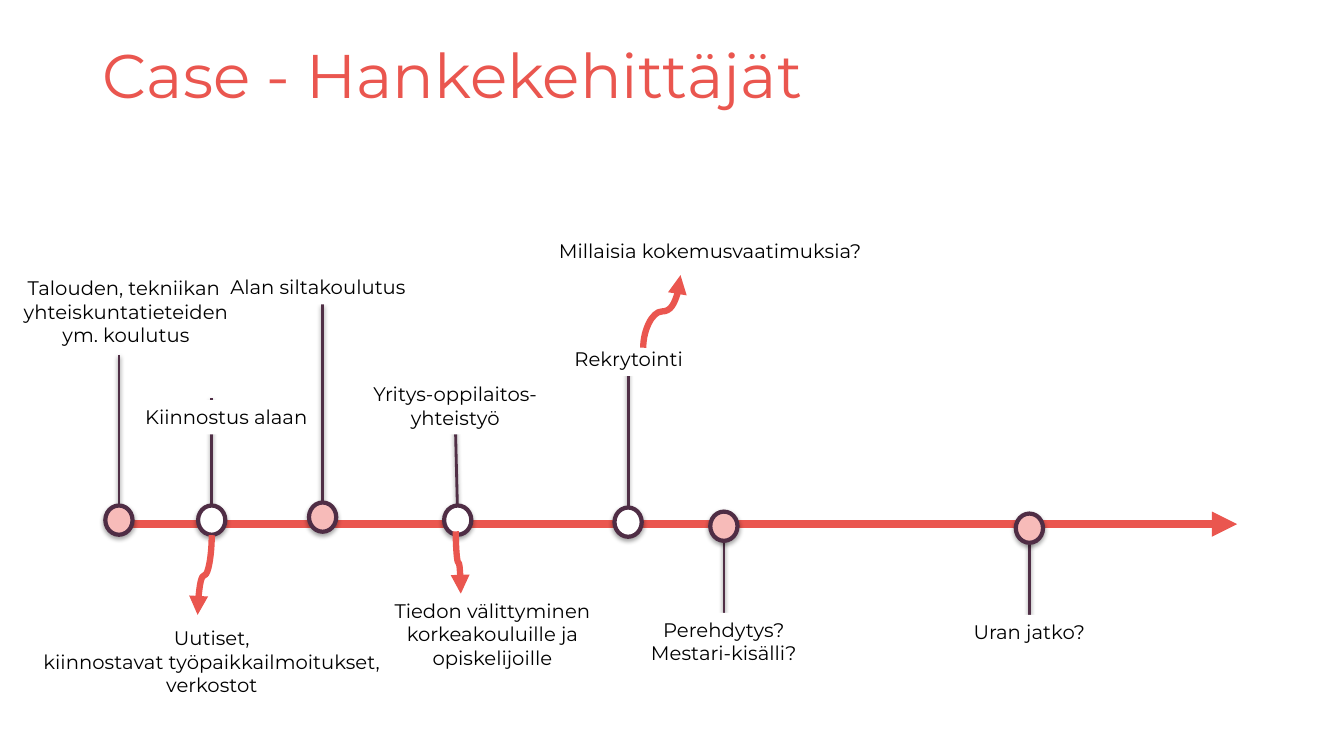
from dataclasses import dataclass
from typing import Optional

from lxml import etree
from pptx import Presentation
from pptx.dml.color import RGBColor
from pptx.enum.shapes import MSO_CONNECTOR as Link, MSO_SHAPE as Shape
from pptx.enum.text import MSO_ANCHOR as Anchor, MSO_AUTO_SIZE as Fit, PP_ALIGN as Align
from pptx.oxml import parse_xml
from pptx.oxml.ns import nsdecls, qn
from pptx.util import Inches, Pt

FONT = "Montserrat"
CORAL = RGBColor(0xEA, 0x56, 0x4F)
PINK = RGBColor(0xF7, 0xBB, 0xB9)
PLUM = RGBColor(0x50, 0x2F, 0x46)
EDGE = RGBColor(0x4F, 0x2D, 0x45)
WHITE = RGBColor(0xFF, 0xFF, 0xFF)
BLACK = RGBColor(0, 0, 0)
AXIS_Y = 5.2
DOT_W, DOT_H = 0.27, 0.29


@dataclass
class Label:
    text: str
    left: float
    top: float
    width: float
    height: float
    fill: Optional[RGBColor] = WHITE
    wrap: bool = False


@dataclass
class Stop:
    x: float
    y: float
    tip: float
    fill: RGBColor
    label: Label
    lean: float = 0


@dataclass
class Curve:
    x1: float
    y1: float
    x2: float
    y2: float


STOPS = [
    Stop(1.18, 5.16, 3.52, PINK,
         Label("Talouden, tekniikan, yhteiskuntatieteiden ym. koulutus",
               0.08, 2.69, 2.34, 0.81, fill=None, wrap=True)),
    Stop(2.1, 5.16, 3.95, WHITE,
         Label("Kiinnostus alaan", 1.29, 3.97, 1.91, 0.34, wrap=True)),
    Stop(3.2, 5.13, 3.02, PINK,
         Label("Alan siltakoulutus", 2.18, 2.68, 1.95, 0.34)),
    Stop(4.54, 5.16, 3.95, WHITE,
         Label("Yritys-oppilaitos-\nyhteistyö", 3.59, 3.74, 1.85, 0.57), lean=-0.03),
    Stop(6.23, 5.18, 3.54, WHITE,
         Label("Rekrytointi", 5.59, 3.39, 1.29, 0.34)),
    Stop(7.18, 5.22, 6.08, PINK,
         Label("Perehdytys?\nMestari-kisälli?", 6.35, 6.08, 1.66, 0.57)),
    Stop(10.21, 5.24, 6.1, PINK,
         Label("Uran jatko?", 9.54, 6.1, 1.34, 0.34)),
]
CURVES = [
    Curve(2.1, 5.31, 1.96, 6.1),
    Curve(4.52, 5.27, 4.57, 5.89),
    Curve(6.38, 3.45, 6.75, 2.73),
]
NOTES = [
    Label("Uutiset,\nkiinnostavat työpaikkailmoitukset,\nverkostot", 0.29, 6.16, 3.62, 0.81),
    Label("Tiedon välittyminen\nkorkeakouluille ja\nopiskelijoille", 3.8, 5.89, 2.17, 0.81),
    Label("Millaisia kokemusvaatimuksia?", 5.42, 2.32, 3.25, 0.34),
]


def write(frame, text: str, *, size: float, color: RGBColor, align: Align,
          wrap: bool = True, fit: Fit = Fit.NONE, space: Optional[float] = None) -> None:
    frame.word_wrap = wrap
    frame.auto_size = fit
    frame.vertical_anchor = Anchor.TOP
    para = frame.paragraphs[0]
    para.text = text.replace("\n", "\v")
    para.alignment = align
    para.line_spacing = space
    for run in para.runs:
        run.font.name = FONT
        run.font.size = Pt(size)
        run.font.color.rgb = color


def shade(shape, alpha: int, dist: int) -> None:
    """Cast a soft black shadow straight down."""
    props = shape._element.spPr
    for old in props.findall(qn("a:effectLst")):
        props.remove(old)
    props.append(parse_xml(
        f'<a:effectLst {nsdecls("a")}><a:outerShdw blurRad="40000" dist="{dist}" '
        f'dir="5400000" rotWithShape="0"><a:srgbClr val="000000">'
        f'<a:alpha val="{alpha}000"/></a:srgbClr></a:outerShdw></a:effectLst>'))


def join(slide, kind: Link, x1: float, y1: float, x2: float, y2: float, *,
         color: RGBColor, width: float, arrow: bool = False):
    """Add a connector without shadow, with an optional arrowhead."""
    line = slide.shapes.add_connector(kind, Inches(x1), Inches(y1), Inches(x2), Inches(y2))
    line.line.color.rgb = color
    line.line.width = Pt(width)
    if arrow:
        etree.SubElement(line.line._get_or_add_ln(), qn("a:tailEnd"), type="triangle")
    etree.SubElement(line._element.spPr, qn("a:effectLst"))
    return line


def bend(slide, curve: Curve) -> None:
    """Draw a curved arrow that leaves and arrives vertically, by a quarter turn."""
    mid_x, mid_y = (curve.x1 + curve.x2) / 2, (curve.y1 + curve.y2) / 2
    half_x, half_y = (curve.x2 - curve.x1) / 2, (curve.y2 - curve.y1) / 2
    line = join(slide, Link.CURVE, mid_x - half_y, mid_y + half_x,
                mid_x + half_y, mid_y - half_x, color=CORAL, width=4.5, arrow=True)
    line._element.spPr.find(qn("a:xfrm")).set("rot", "5400000")


def add_label(slide, label: Label) -> None:
    box = slide.shapes.add_textbox(Inches(label.left), Inches(label.top),
                                   Inches(label.width), Inches(label.height))
    if label.fill is not None:
        box.fill.solid()
        box.fill.fore_color.rgb = label.fill
    write(box.text_frame, label.text, size=14, color=BLACK, align=Align.CENTER,
          wrap=label.wrap, fit=Fit.SHAPE_TO_FIT_TEXT)


def add_stop(slide, stop: Stop) -> None:
    stem = join(slide, Link.STRAIGHT, stop.x + stop.lean, stop.tip, stop.x, stop.y,
                color=PLUM, width=2)
    shade(stem, 38, 20000)
    dot = slide.shapes.add_shape(Shape.OVAL, Inches(stop.x - DOT_W / 2),
                                 Inches(stop.y - DOT_H / 2), Inches(DOT_W), Inches(DOT_H))
    dot.fill.solid()
    dot.fill.fore_color.rgb = stop.fill
    dot.line.color.rgb = EDGE
    dot.line.width = Pt(3)
    shade(dot, 35, 23000)
    add_label(slide, stop.label)


def add_title(slide, text: str) -> None:
    title = slide.shapes.title
    title.left, title.top = Inches(0.92), Inches(0.4)
    title.width, title.height = Inches(11.97), Inches(1.45)
    write(title.text_frame, text, size=44, color=CORAL, align=Align.LEFT, space=0.9)


def main() -> None:
    deck = Presentation()
    deck.slide_width, deck.slide_height = Inches(13.33), Inches(7.5)
    slide = deck.slides.add_slide(deck.slide_layouts[5])
    add_title(slide, "Case - Hankekehittäjät")
    join(slide, Link.STRAIGHT, 1.05, AXIS_Y, 12.27, AXIS_Y, color=CORAL, width=6, arrow=True)
    for stop in STOPS:
        add_stop(slide, stop)
    for curve in CURVES:
        bend(slide, curve)
    for note in NOTES:
        add_label(slide, note)
    deck.save("out.pptx")


if __name__ == "__main__":
    main()
